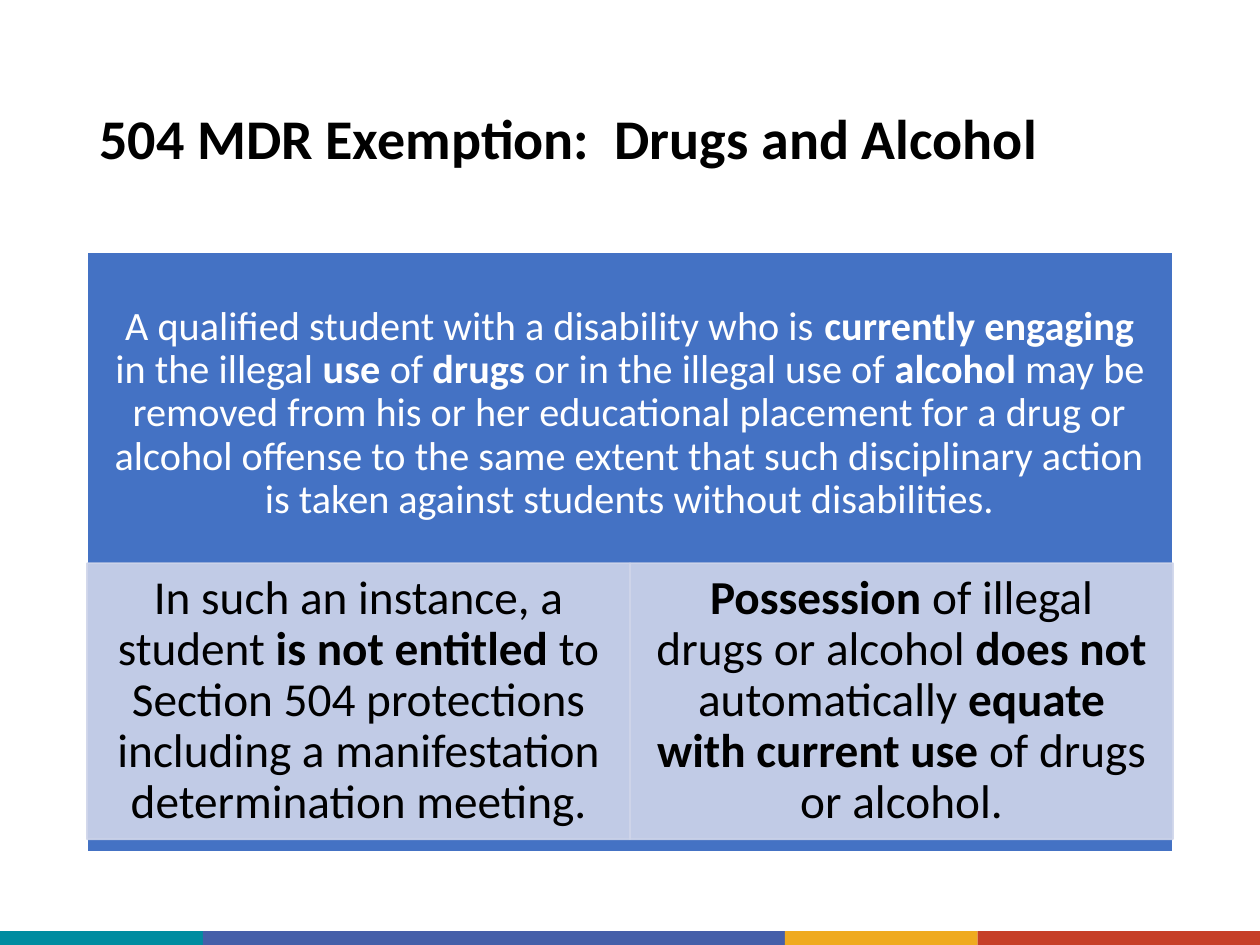
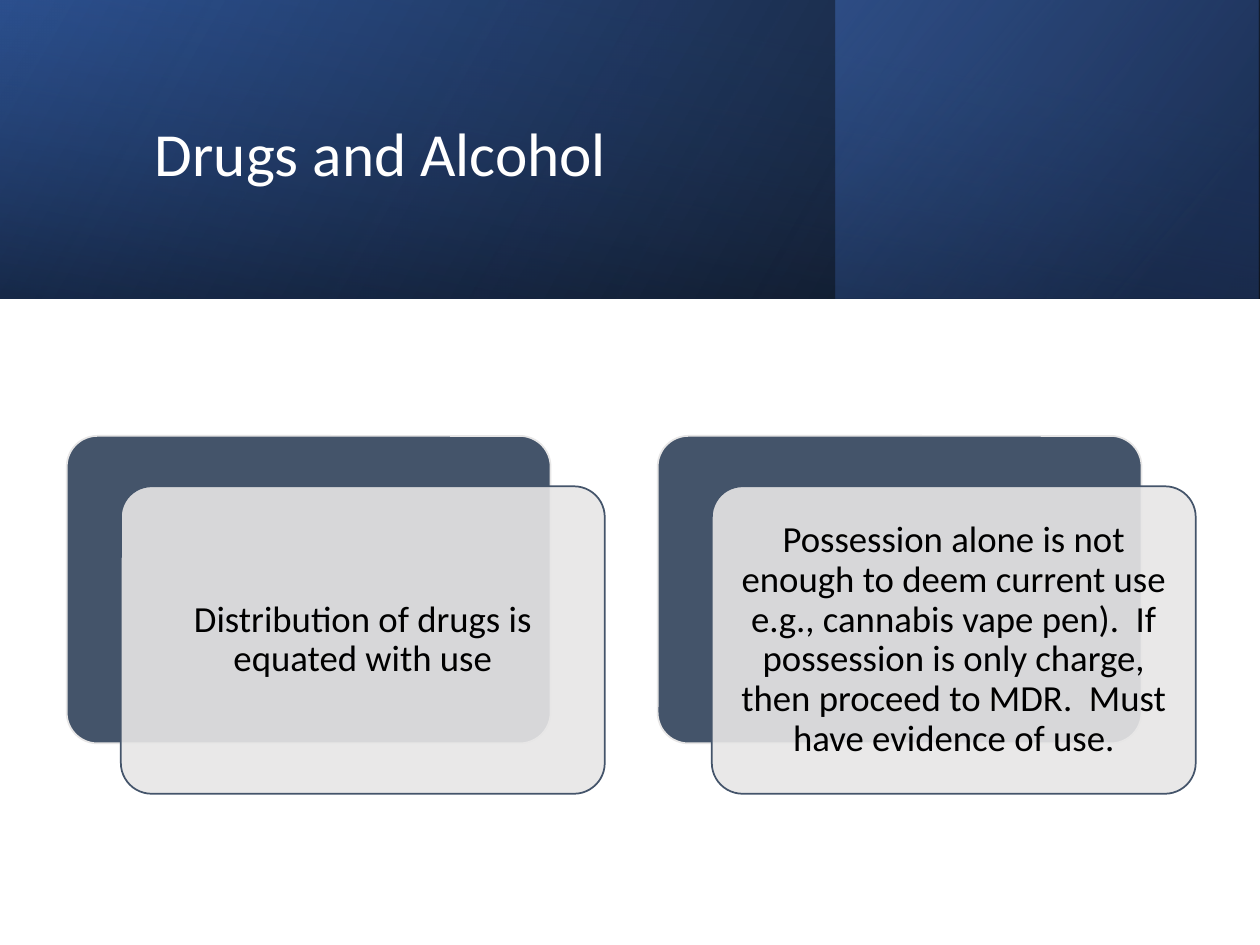
from lxml.etree import SubElement
from pptx import Presentation
from pptx.dml.color import RGBColor
from pptx.enum.shapes import MSO_SHAPE as Shape
from pptx.enum.text import MSO_ANCHOR as Anchor, MSO_AUTO_SIZE as AutoSize, PP_ALIGN as Align
from pptx.oxml.ns import qn
from pptx.util import Inches, Pt

FONT = "Calibri"
COLORS = {
    "white": "FFFFFF", "black": "000000",
    "teal": "008CA0", "indigo": "455FA9", "amber": "EFAA1F", "red": "C63F28",
    "blue": "4472C4", "pale blue": "CFD5EA",
    "slate": "44546A", "light gray": "E7E6E6",
    "royal": "2F5597", "navy": "203864",
}
FOOTER_STRIPS = [("teal", 1.61), ("indigo", 4.62), ("amber", 1.53), ("red", 2.24)]


def rgb(name):
    return RGBColor.from_string(COLORS[name])


def set_opacity(color_element, percent):
    SubElement(color_element, qn("a:alpha")).set("val", str(percent * 1000))


def add_box(slide, box, fill=None, line=None, kind=Shape.RECTANGLE, fill_opacity=100,
            line_opacity=100):
    shape = slide.shapes.add_shape(kind, *map(Inches, box))
    shape.shadow.inherit = False
    if fill:
        shape.fill.solid()
        shape.fill.fore_color.rgb = rgb(fill)
    if line:
        shape.line.color.rgb = rgb(line)
        shape.line.width = Pt(1)
    else:
        shape.line.fill.background()
    for color_element in shape._element.spPr.iter(qn("a:srgbClr")):
        is_line = color_element.getparent().getparent().tag == qn("a:ln")
        opacity = line_opacity if is_line else fill_opacity
        if opacity < 100:
            set_opacity(color_element, opacity)
    return shape


def add_gradient_box(slide, box, angle, stops):
    """Each stop is (position in percent, colour, opacity); angle is counter-clockwise."""
    shape = add_box(slide, box)
    shape.fill.gradient()
    shape.fill.gradient_angle = angle
    for gradient_stop, (position, color, _) in zip(shape.fill.gradient_stops, stops):
        gradient_stop.position = position / 100
        gradient_stop.color.rgb = rgb(color)
    color_elements = list(shape._element.spPr.iter(qn("a:srgbClr")))
    for color_element, (_, _, opacity) in zip(color_elements, stops):
        set_opacity(color_element, opacity)


def format_paragraph(paragraph, size, color, align, bold=False):
    paragraph.alignment = align
    paragraph.line_spacing = 0.9
    font = paragraph.font
    font.name, font.size, font.bold = FONT, Pt(size), bold
    font.color.rgb = rgb(color)


def write_text(shape, text, size, color, inset_x, inset_y):
    """Write centred text in which ** switches bold on and off."""
    frame = shape.text_frame
    frame.word_wrap = True
    frame.vertical_anchor = Anchor.MIDDLE
    frame.margin_left = frame.margin_right = Inches(inset_x)
    frame.margin_top = frame.margin_bottom = Inches(inset_y)
    paragraph = frame.paragraphs[0]
    format_paragraph(paragraph, size, color, Align.CENTER)
    for index, part in enumerate(text.split("**")):
        if part:
            run = paragraph.add_run()
            run.text = part
            if index % 2:
                run.font.bold = True


def add_title(slide, box, text, size, color, bold=False):
    title = slide.shapes.title
    title.left, title.top, title.width, title.height = map(Inches, box)
    frame = title.text_frame
    frame.text = text
    frame.word_wrap = True
    frame.auto_size = AutoSize.NONE
    frame.vertical_anchor = Anchor.MIDDLE
    format_paragraph(frame.paragraphs[0], size, color, Align.LEFT, bold)
    title._element.getparent().append(title._element)  # in front of any band


def add_footer(slide):
    left = 0
    for color, width in FOOTER_STRIPS:
        add_box(slide, (left, 7.39, width, 0.11), color)
        left += width


def add_rule_panel(slide, box, rule, consequences):
    """A heading rule above a row of equal cells, all on one panel."""
    left, top, width, height = box
    add_box(slide, box, "blue", "white")
    heading = slide.shapes.add_textbox(*map(Inches, (left, top, width, 2.57)))
    write_text(heading, rule, 23, "white", 0.18, 0.18)
    cell_width = width / len(consequences)
    for column, text in enumerate(consequences):
        cell_box = (left + column * cell_width, top + 2.47, cell_width, height - 2.57)
        cell = add_box(slide, cell_box, "pale blue", "pale blue",
                       fill_opacity=90, line_opacity=90)
        write_text(cell, text, 27, "black", 0.21, 0.04)


def add_header_band(slide, box):
    left, top, width, height = box
    add_gradient_box(slide, box, 150, [(0, "black", 96), (100, "royal", 100)])
    add_gradient_box(slide, (left + 6.63, top, width - 6.64, height), 140,
                     [(19, "navy", 68), (100, "blue", 48)])
    add_gradient_box(slide, box, 260, [(23, "royal", 16), (99, "black", 45)])


def add_layered_card(slide, box, text):
    left, top, width, height = box
    back = add_box(slide, box, "slate", "light gray", Shape.ROUNDED_RECTANGLE)
    front = add_box(slide, (left + 0.43, top + 0.4, width, height), "light gray", "slate",
                    Shape.ROUNDED_RECTANGLE, fill_opacity=90)
    for shape in (back, front):
        shape.adjustments[0] = 0.1
    write_text(front, text, 21, "black", 0.09, 0.09)


def build_exemption_slide(slide):
    add_footer(slide)
    add_title(slide, (0.69, 0.4, 8.62, 1.45), "504 MDR Exemption:  Drugs and Alcohol",
              32, "black", bold=True)
    add_rule_panel(
        slide, (0.69, 2, 8.62, 4.76),
        "A qualified student with a disability who is **currently engaging** in the illegal "
        "**use **of **drugs** or in the illegal use of **alcohol** may be removed from his or "
        "her educational placement for a drug or alcohol offense to the same extent that such "
        "disciplinary action is taken against students without disabilities.",
        ["In such an instance, a student **is not entitled **to Section 504 protections "
         "including a manifestation determination meeting.",
         "**Possession **of illegal drugs or alcohol **does not **automatically "
         "**equate with current use **of drugs or alcohol."])


def build_use_slide(slide):
    add_header_band(slide, (0, 0, 10, 2.37))
    add_title(slide, (1.13, 0.38, 7.97, 1.72), "Drugs and Alcohol", 35, "white")
    cards = [
        "Distribution of drugs is equated with use",
        "Possession alone is not enough to deem current use e.g., cannabis vape pen).  If "
        "possession is only charge, then proceed to MDR.  Must have evidence of use.",
    ]
    for column, text in enumerate(cards):
        add_layered_card(slide, (0.53 + column * 4.69, 3.46, 3.84, 2.44), text)


def main():
    presentation = Presentation()
    presentation.slide_width, presentation.slide_height = Inches(10), Inches(7.5)
    title_only = presentation.slide_layouts[5]
    for build in (build_exemption_slide, build_use_slide):
        build(presentation.slides.add_slide(title_only))
    presentation.save("out.pptx")


if __name__ == "__main__":
    main()
